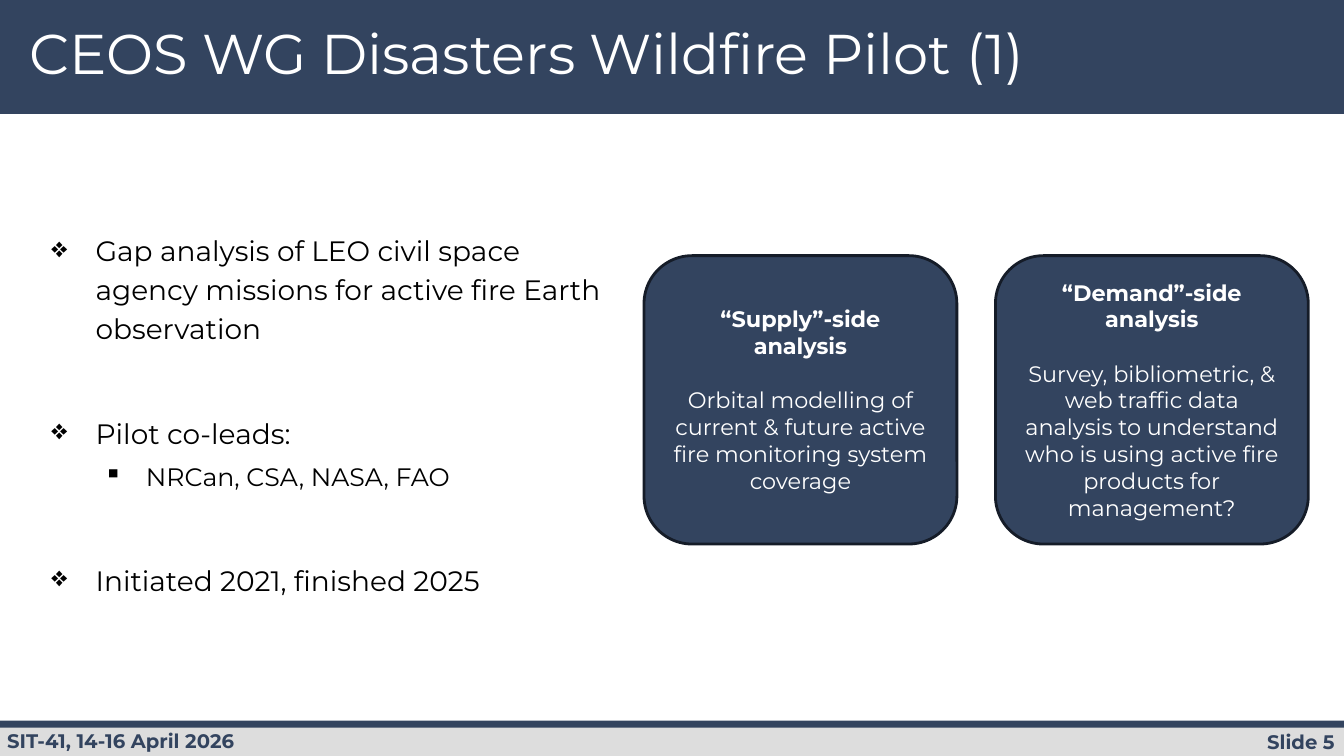
import dataclasses

import pptx
import pptx.dml.color
import pptx.enum.shapes
import pptx.enum.text
import pptx.oxml
import pptx.oxml.ns
import pptx.util

Pt = pptx.util.Pt
Shapes = pptx.enum.shapes.MSO_SHAPE
Align = pptx.enum.text.PP_ALIGN
Anchor = pptx.enum.text.MSO_ANCHOR


@dataclasses.dataclass(frozen=True)
class Theme:
    font: str = "Montserrat"
    navy: str = "33445F"
    outline: str = "151C28"
    grey: str = "DDDDDD"
    white: str = "FFFFFF"
    black: str = "000000"
    title_size: float = 40
    bullet_size: float = 20
    sub_bullet_size: float = 18
    card_size: float = 16
    footer_size: float = 14


THEME = Theme()
WIDTH, HEIGHT = 960, 540


def color(value):
    return pptx.dml.color.RGBColor.from_string(value)


def add_block(slide, kind, box, fill, line=None):
    shape = slide.shapes.add_shape(kind, *map(Pt, box))
    shape.shadow.inherit = False
    shape.fill.solid()
    shape.fill.fore_color.rgb = color(fill)
    if line:
        shape.line.color.rgb = color(line)
        shape.line.width = Pt(2)
    else:
        shape.line.fill.background()
    return shape


def add_text_box(slide, box):
    shape = slide.shapes.add_textbox(*map(Pt, box))
    shape.text_frame.word_wrap = True
    return shape.text_frame


def add_bullet(paragraph, character, margin, hanging):
    properties = paragraph._p.get_or_add_pPr()
    properties.set("marL", str(Pt(margin)))
    properties.set("indent", str(-Pt(hanging)))
    namespace = pptx.oxml.ns.nsdecls("a")
    for xml in (
        f'<a:buClr {namespace}><a:srgbClr val="{THEME.black}"/></a:buClr>',
        f'<a:buChar {namespace} char="{character}"/>',
    ):
        properties.append(pptx.oxml.parse_xml(xml))


def write(frame, text, *, size, ink, bold=False, align=Align.LEFT,
          before=0, spacing=None, bullet=None):
    first = frame.paragraphs[0]
    paragraph = frame.add_paragraph() if first.runs else first
    paragraph.alignment = align
    if before:
        paragraph.space_before = Pt(before)
    if spacing:
        paragraph.line_spacing = spacing
    if bullet:
        add_bullet(paragraph, *bullet)
    run = paragraph.add_run()
    run.text = text
    run.font.name = THEME.font
    run.font.size = Pt(size)
    run.font.bold = bold
    run.font.color.rgb = color(ink)


def add_header(slide, box, title):
    left, top, width, height = box
    add_block(slide, Shapes.RECTANGLE, box, THEME.navy)
    frame = add_text_box(slide, (left + 13.7, top + 15, width - 220, 48))
    write(frame, title, size=THEME.title_size, ink=THEME.white, spacing=0.9)


def add_footer(slide, box, event, number):
    left, top, width, height = box
    add_block(slide, Shapes.RECTANGLE, (left, top + 2.9, width, height - 2.9), THEME.grey)
    add_block(slide, Shapes.RECTANGLE, (left, top, width, 5), THEME.navy)
    labels = (
        (event, left - 2, top + 2.2, 463, Align.LEFT),
        (number, left + width - 151.5, top + 2.9, 152, Align.RIGHT),
    )
    for text, label_left, label_top, label_width, align in labels:
        frame = add_text_box(slide, (label_left, label_top, label_width, 24.5))
        write(frame, text, size=THEME.footer_size, ink=THEME.navy, bold=True, align=align)


def add_bullets(slide, box, items):
    frame = add_text_box(slide, box)
    main = dict(size=THEME.bullet_size, bullet=("❖", 36, 31.5))
    detail = dict(size=THEME.sub_bullet_size, bullet=("▪", 72, 30))
    for index, (text, details) in enumerate(items):
        write(frame, text, ink=THEME.black, spacing=1.15,
              before=47.5 if index else 0, **main)
        for line in details:
            write(frame, line, ink=THEME.black, spacing=1.15, before=5, **detail)


def add_card(slide, box, headings, lines):
    shape = add_block(slide, Shapes.ROUNDED_RECTANGLE, box, THEME.navy, THEME.outline)
    frame = shape.text_frame
    frame.word_wrap = True
    frame.vertical_anchor = Anchor.MIDDLE
    style = dict(size=THEME.card_size, ink=THEME.white, align=Align.CENTER)
    for heading in headings:
        write(frame, heading, bold=True, **style)
    for index, line in enumerate(lines):
        write(frame, line, before=0 if index else 19.5, **style)


def add_cards(slide, box, cards, gap):
    left, top, width, height = box
    card_width = (width - gap * (len(cards) - 1)) / len(cards)
    for index, (headings, lines) in enumerate(cards):
        card_left = left + index * (card_width + gap)
        add_card(slide, (card_left, top, card_width, height), headings, lines)


def main():
    presentation = pptx.Presentation()
    presentation.slide_width = Pt(WIDTH)
    presentation.slide_height = Pt(HEIGHT)
    slide = presentation.slides.add_slide(presentation.slide_layouts[6])
    add_footer(slide, (0, 514.8, WIDTH, 25.2), "SIT-41, 14-16 April 2026", "Slide 5")
    add_header(slide, (0, 0, WIDTH, 81.4), "CEOS WG Disasters Wildfire Pilot (1)")
    add_bullets(slide, (25.2, 160, 427, 329), [
        ("Gap analysis of LEO civil space agency missions for active fire Earth observation", []),
        ("Pilot co-leads:", ["NRCan, CSA, NASA, FAO"]),
        ("Initiated 2021, finished 2025", []),
    ])
    add_cards(slide, (460, 182.6, 474.5, 206), [
        (["“Supply”-side", "analysis"],
         ["Orbital modelling of current & future active fire monitoring system coverage"]),
        (["“Demand”-side analysis"],
         ["Survey, bibliometric, & web traffic data analysis to understand",
          "who is using active fire products for management?"]),
    ], gap=27.5)
    presentation.save("out.pptx")


if __name__ == "__main__":
    main()
